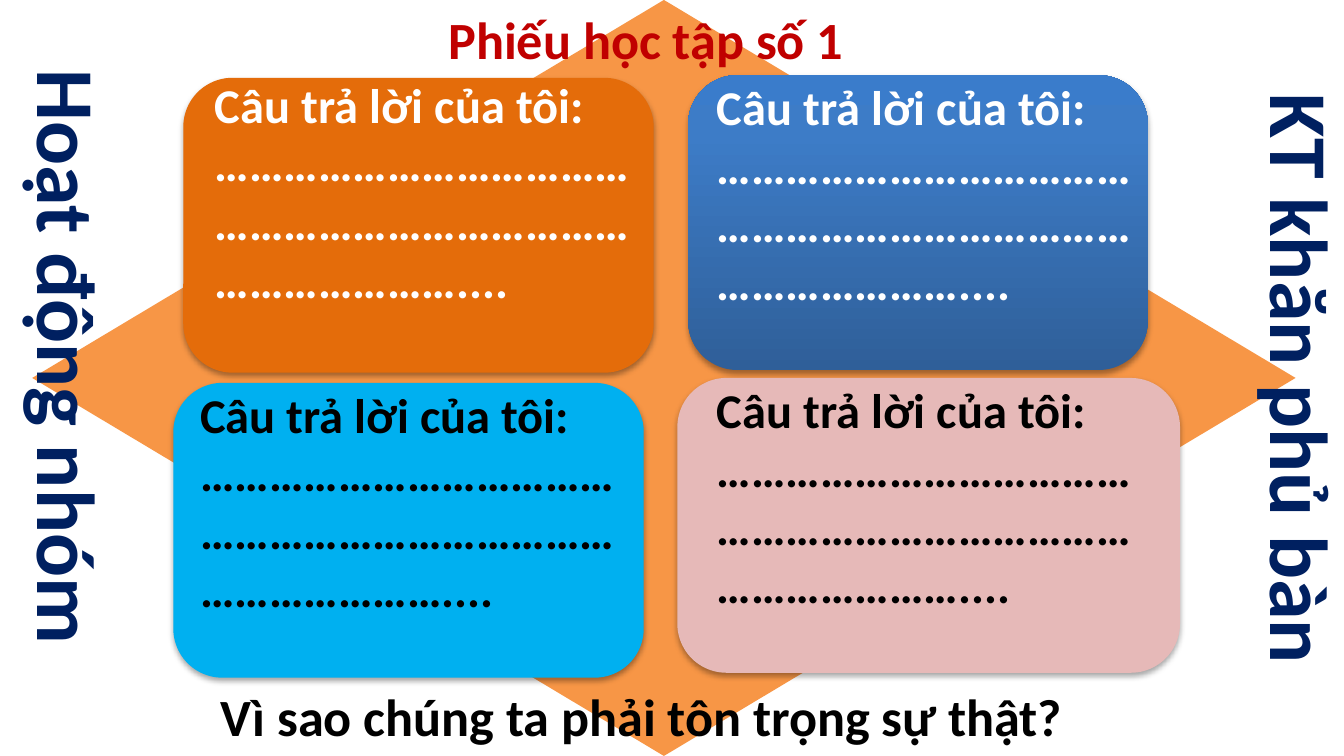
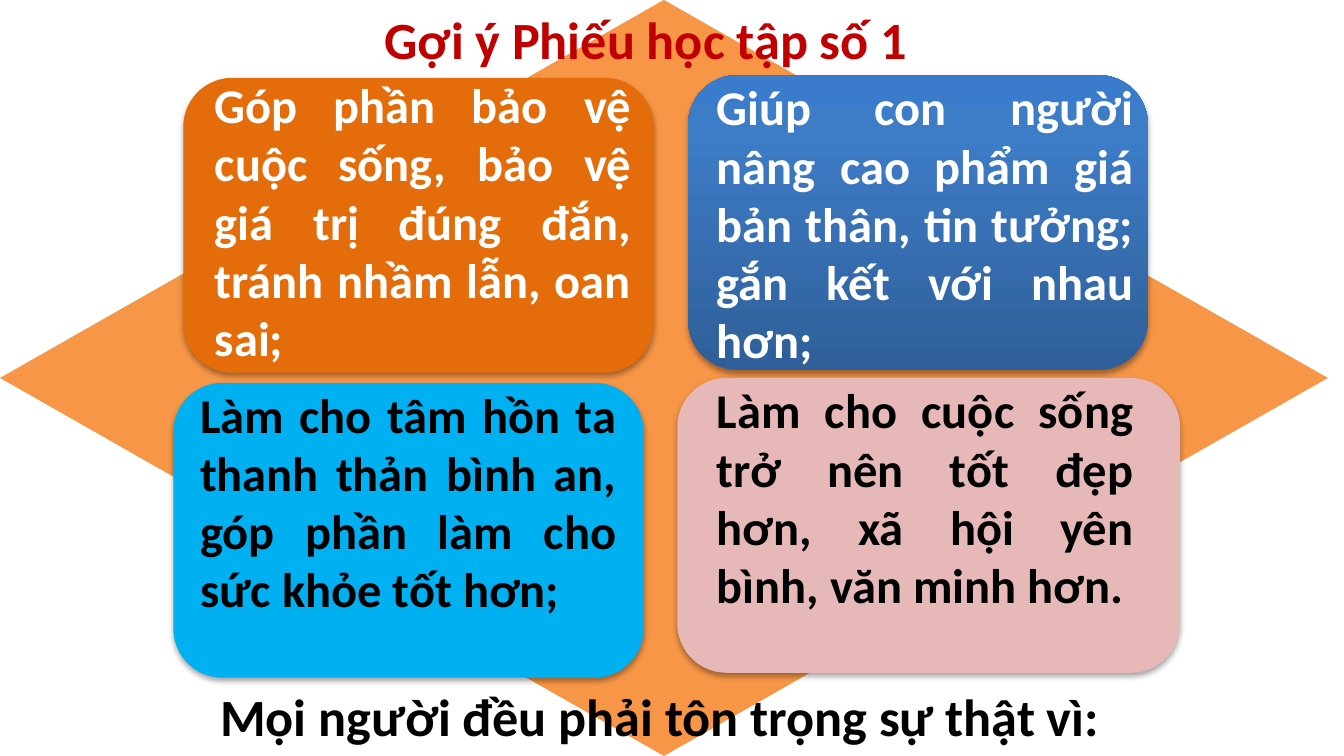
from copy import deepcopy
from dataclasses import dataclass

from lxml import etree
from pptx import Presentation
from pptx.dml.color import RGBColor
from pptx.enum import shapes, text
from pptx.oxml import ns
from pptx import util as u

WIDTH = u.Inches(10)
HEIGHT = u.Emu(WIDTH * 9 // 16)
FONT = "Calibri"
COLOURS = {
    "diamond": "F79646", "orange": "E46C0A", "cyan": "00B0F0", "pink": "E6B9B8",
    "blue_low": "2F5F99", "blue_mid": "3D7CC7", "blue_top": "3A7CCB",
    "red": "C00000", "navy": "002060", "outline": "467AB8",
    "black": "000000", "white": "FFFFFF",
}
BLUE_STOPS = [(0, "blue_low"), (0.8, "blue_mid"), (1, "blue_top")]
LEFT, CENTER, JUSTIFY = text.PP_ALIGN.LEFT, text.PP_ALIGN.CENTER, text.PP_ALIGN.JUSTIFY


@dataclass(frozen=True)
class Area:
    """A rectangle in percent of the slide's width and height."""
    left: float
    top: float
    wide: float
    high: float

    def lengths(self) -> tuple[int, int, int, int]:
        """Return left, top, width and height in EMU."""
        return (int(WIDTH * self.left / 100), int(HEIGHT * self.top / 100),
                int(WIDTH * self.wide / 100), int(HEIGHT * self.high / 100))


@dataclass(frozen=True)
class Card:
    """A rounded answer card and the place of its text."""
    area: Area
    fill: str
    words: Area
    colour: str


@dataclass(frozen=True)
class Sheet:
    """The contents of one worksheet slide."""
    title: str
    question: str
    question_width: float
    diamond: Area
    answers: tuple[str, ...]
    align: text.PP_ALIGN
    sides: tuple[tuple[str, Area], ...] = ()


CARDS = (
    Card(Area(13.64, 10.3, 35, 39), "orange", Area(15, 9.07, 33, 40.7), "white"),
    Card(Area(51.2, 9.95, 34.2, 39), "blue", Area(52.35, 9.35, 33, 40.7), "white"),
    Card(Area(12.9, 50.65, 35, 39), "cyan", Area(13.9, 50, 33, 40.7), "black"),
    Card(Area(50.4, 50, 37.4, 39), "pink", Area(52.35, 49.45, 33, 40.7), "black"),
)
TITLE_AREA = Area(13.8, 0.1, 68.5, 10.1)
BLANK_ANSWER = "Câu trả lời của tôi:\n…………………………………………………………………………………...."

SHEETS = (
    Sheet("Phiếu học tập số 1", "Vì sao chúng ta phải tôn trọng sự thật?", 68.5,
          Area(2.4, 0, 94, 100), (BLANK_ANSWER,) * len(CARDS), LEFT,
          (("Hoạt động nhóm", Area(0, 5.2, 9.4, 84)),
           ("KT khăn phủ bàn", Area(91.7, 2.5, 9.4, 95.2)))),
    Sheet("Gợi ý Phiếu học tập số 1", "Mọi người đều phải tôn trọng sự thật vì:", 74,
          Area(0, 0, 98.8, 100),
          ("Góp phần bảo vệ cuộc sống, bảo vệ giá trị đúng đắn, tránh nhầm lẫn, oan sai;",
           "Giúp con người nâng cao phẩm giá bản thân, tin tưởng; gắn kết với nhau hơn;",
           "Làm cho tâm hồn ta thanh thản bình an, góp phần làm cho sức khỏe tốt hơn;",
           "Làm cho cuộc sống trở nên tốt đẹp hơn, xã hội yên bình, văn minh hơn."),
          JUSTIFY),
)


def rgb(name: str) -> RGBColor:
    """Look up a colour by name."""
    return RGBColor.from_string(COLOURS[name])


def add_node(parent, tag: str, **attributes):
    """Append a DrawingML element."""
    return etree.SubElement(parent, ns.qn(tag),
                            {key: str(value) for key, value in attributes.items()})


def add_block(page, kind, area: Area, fill: str):
    """Draw a preset shape without line or shadow."""
    block = page.shapes.add_shape(kind, *area.lengths())
    if fill == "blue":
        fill_blue(block)
    else:
        block.fill.solid()
        block.fill.fore_color.rgb = rgb(fill)
    block.line.fill.background()
    block.shadow.inherit = False
    return block


def fill_blue(block) -> None:
    """Fill a shape with the upward blue gradient."""
    block.fill.gradient()
    block.fill.gradient_angle = 90
    stop_list = block.element.find(".//" + ns.qn("a:gsLst"))
    stop_list.append(deepcopy(stop_list[-1]))
    for stop, (position, name) in zip(block.fill.gradient_stops, BLUE_STOPS):
        stop.position = position
        stop.color.rgb = rgb(name)


def add_shadow(block) -> None:
    """Give a shape a soft shadow below it."""
    effects = block.element.spPr.find(ns.qn("a:effectLst"))
    shadow = add_node(effects, "a:outerShdw", blurRad=u.Pt(3.1), dist=u.Pt(1.8),
                      dir=5400000, rotWithShape=0)
    colour = add_node(shadow, "a:srgbClr", val=COLOURS["black"])
    add_node(colour, "a:alpha", val=35000)


def write(box, words: str, size: float, colour: str, align=LEFT) -> None:
    """Set and format the text of a box."""
    frame = box.text_frame
    frame.text = words
    frame.word_wrap = True
    frame.auto_size = text.MSO_AUTO_SIZE.SHAPE_TO_FIT_TEXT
    frame.vertical_anchor = text.MSO_ANCHOR.TOP
    for para in frame.paragraphs:
        para.alignment = align
        for span in para.runs:
            span.font.name = FONT
            span.font.size = u.Pt(size)
            span.font.bold = True
            span.font.color.rgb = rgb(colour)


def add_words(page, area: Area, words: str, size: float, colour: str, align=LEFT):
    """Add a formatted text box."""
    box = page.shapes.add_textbox(*area.lengths())
    write(box, words, size, colour, align)
    return box


def add_side(page, area: Area, words: str) -> None:
    """Add an outlined label that runs down the slide's edge."""
    box = add_words(page, area, words, 44, "navy", CENTER)
    box.text_frame.word_wrap = False
    box.element.find(".//" + ns.qn("a:bodyPr")).set("vert", "vert")
    properties = box.element.find(".//" + ns.qn("a:rPr"))
    outline = add_node(properties, "a:ln", w=u.Pt(0.83))
    add_node(add_node(outline, "a:solidFill"), "a:srgbClr", val=COLOURS["outline"])
    properties.insert(0, outline)


def place_title(page, words: str) -> None:
    """Format the title placeholder and bring it to the front."""
    title = page.shapes.title
    title.left, title.top, title.width, title.height = TITLE_AREA.lengths()
    write(title, words, 28, "red", CENTER)
    title.element.getparent().append(title.element)


def build_sheet(deck, sheet: Sheet) -> None:
    """Build one worksheet slide."""
    page = deck.slides.add_slide(deck.slide_layouts.get_by_name("Title Only"))
    add_block(page, shapes.MSO_SHAPE.DIAMOND, sheet.diamond, "diamond")
    for card in CARDS:
        add_shadow(add_block(page, shapes.MSO_SHAPE.ROUNDED_RECTANGLE, card.area, card.fill))
    for words, area in sheet.sides:
        add_side(page, area, words)
    add_words(page, Area(15.4, 89.6, sheet.question_width, 10.1), sheet.question, 28, "black")
    place_title(page, sheet.title)
    for card, answer in zip(CARDS, sheet.answers):
        add_words(page, card.words, answer, 26, card.colour, sheet.align)


def main() -> None:
    """Build and save the deck."""
    deck = Presentation()
    deck.slide_width, deck.slide_height = WIDTH, HEIGHT
    for sheet in SHEETS:
        build_sheet(deck, sheet)
    deck.save("out.pptx")


if __name__ == "__main__":
    main()
